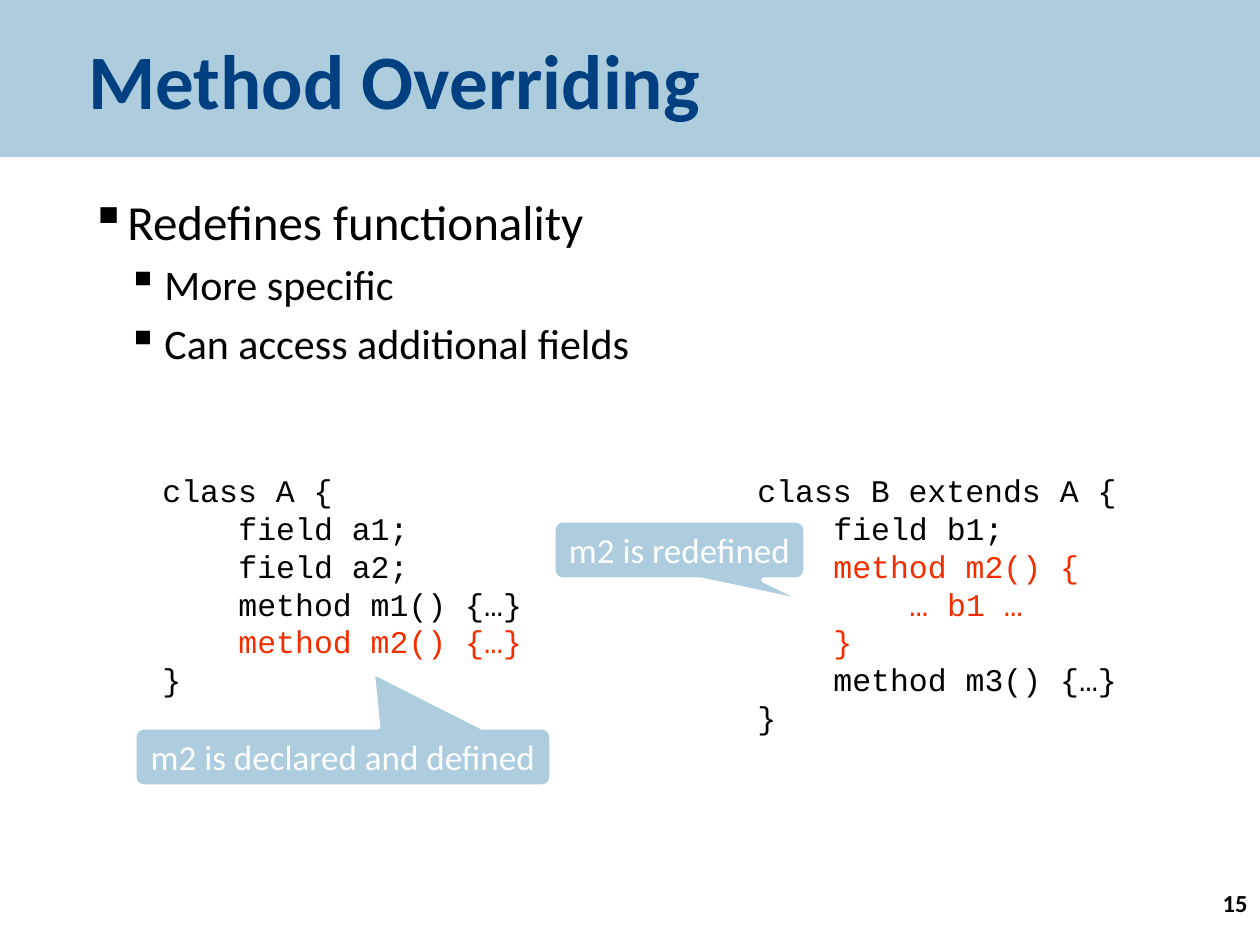
from pptx import Presentation
from pptx.dml.color import RGBColor
from pptx.enum.shapes import MSO_SHAPE
from pptx.enum.text import MSO_ANCHOR, MSO_AUTO_SIZE, PP_ALIGN
from pptx.oxml.xmlchemy import OxmlElement
from pptx.util import Emu, Pt

SCALE = 914400 / 126
PALE_BLUE = RGBColor(0xAD, 0xCD, 0xDF)
NAVY = RGBColor(0x00, 0x40, 0x80)
ORANGE = RGBColor(0xF0, 0x2E, 0x00)
BLACK = RGBColor(0x00, 0x00, 0x00)
WHITE = RGBColor(0xFF, 0xFF, 0xFF)

BODY_FONT, CODE_FONT = "Calibri", "Courier New"
CODE_INDENT = 76
BULLET_INDENT = 37

POINTS = [
    (0, "Redefines functionality"),
    (1, "More specific"),
    (1, "Can access additional fields"),
]
# Each code line: indent level, text, colour
CLASS_A = [
    (0, "class A {", BLACK),
    (1, "field a1;", BLACK),
    (1, "field a2;", BLACK),
    (1, "method m1() {…}", BLACK),
    (1, "method m2() {…}", ORANGE),
    (0, "}", BLACK),
]
CLASS_B = [
    (0, "class B extends A {", BLACK),
    (1, "field b1;", BLACK),
    (1, "method m2() {", ORANGE),
    (2, "… b1 …", ORANGE),
    (1, "}", ORANGE),
    (1, "method m3() {…}", BLACK),
    (0, "}", BLACK),
]


def px(length):
    return Emu(round(length * SCALE))


def apply(target, **values):
    for name, value in values.items():
        setattr(target, name, value)


class SlideBuilder:
    def __init__(self, slide):
        self.slide = slide

    def shape(self, kind, box, fill):
        shape = self.slide.shapes.add_shape(kind, *map(px, box))
        shape.shadow.inherit = False
        shape.fill.solid()
        shape.fill.fore_color.rgb = fill
        shape.line.fill.background()
        return shape

    def text_box(self, box):
        frame = self.slide.shapes.add_textbox(*map(px, box)).text_frame
        frame.word_wrap = True
        return frame

    def add_line(self, frame, text, size, color, font=BODY_FONT, bold=False,
                 align=PP_ALIGN.LEFT, margin=0, hanging=0):
        """Fill the empty first paragraph, or add one, and return it."""
        last = frame.paragraphs[-1]
        paragraph = frame.add_paragraph() if last.runs else last
        paragraph.alignment = align
        properties = paragraph._p.get_or_add_pPr()
        properties.set("marL", str(px(margin)))
        properties.set("indent", str(px(-hanging)))
        run = paragraph.add_run()
        run.text = text
        apply(run.font, name=font, size=Pt(size), bold=bold)
        run.font.color.rgb = color
        return paragraph

    def title(self, text, box):
        frame = self.shape(MSO_SHAPE.RECTANGLE, box, PALE_BLUE).text_frame
        apply(frame, word_wrap=True, vertical_anchor=MSO_ANCHOR.MIDDLE)
        self.add_line(frame, text, 44, NAVY, bold=True, margin=76)

    def bullets(self, points, box):
        frame = self.text_box(box)
        for level, text in points:
            size = 28 - 4 * level
            paragraph = self.add_line(frame, text, size, BLACK, hanging=BULLET_INDENT,
                                      margin=BULLET_INDENT * (level + 1))
            apply(paragraph, level=level, space_before=Pt(size * 0.2))
            bullet = OxmlElement("a:buChar")
            bullet.set("char", "▪")
            paragraph._p.get_or_add_pPr().append(bullet)

    def code(self, lines, box):
        frame = self.shape(MSO_SHAPE.RECTANGLE, box, WHITE).text_frame
        apply(frame, word_wrap=True, vertical_anchor=MSO_ANCHOR.TOP,
              auto_size=MSO_AUTO_SIZE.SHAPE_TO_FIT_TEXT)
        for level, text, color in lines:
            self.add_line(frame, text, 18, color, CODE_FONT, margin=CODE_INDENT * level)

    def callout(self, text, box, pointer):
        """Add a speech bubble; pointer is the tip's offset from its centre."""
        bubble = self.shape(MSO_SHAPE.ROUNDED_RECTANGULAR_CALLOUT, box, PALE_BLUE)
        for index, offset in enumerate(pointer):
            bubble.adjustments[index] = offset
        bubble.line.color.rgb = WHITE
        bubble.line.width = Pt(3)
        frame = bubble.text_frame
        apply(frame, word_wrap=False, vertical_anchor=MSO_ANCHOR.MIDDLE,
              auto_size=MSO_AUTO_SIZE.SHAPE_TO_FIT_TEXT)
        self.add_line(frame, text, 20, WHITE, align=PP_ALIGN.CENTER)

    def page_number(self, number, box):
        self.add_line(self.text_box(box), number, 14, BLACK, bold=True,
                      align=PP_ALIGN.RIGHT)


def main():
    presentation = Presentation()
    apply(presentation, slide_width=px(1260), slide_height=px(945))
    builder = SlideBuilder(presentation.slides.add_slide(presentation.slide_layouts[6]))

    builder.title("Method Overriding", (0, 0, 1260, 157))
    builder.bullets(POINTS, (78, 185, 1087, 655))
    builder.page_number("15", (998, 882, 262, 63))
    builder.code(CLASS_A, (150, 465, 387, 242))
    builder.code(CLASS_B, (745, 465, 387, 280))
    builder.callout("m2 is declared and defined", (134, 727, 418, 60), (0.07, -1.43))
    builder.callout("m2 is redefined", (553, 520, 253, 60), (0.53, 0.9))

    presentation.save("out.pptx")


if __name__ == "__main__":
    main()
